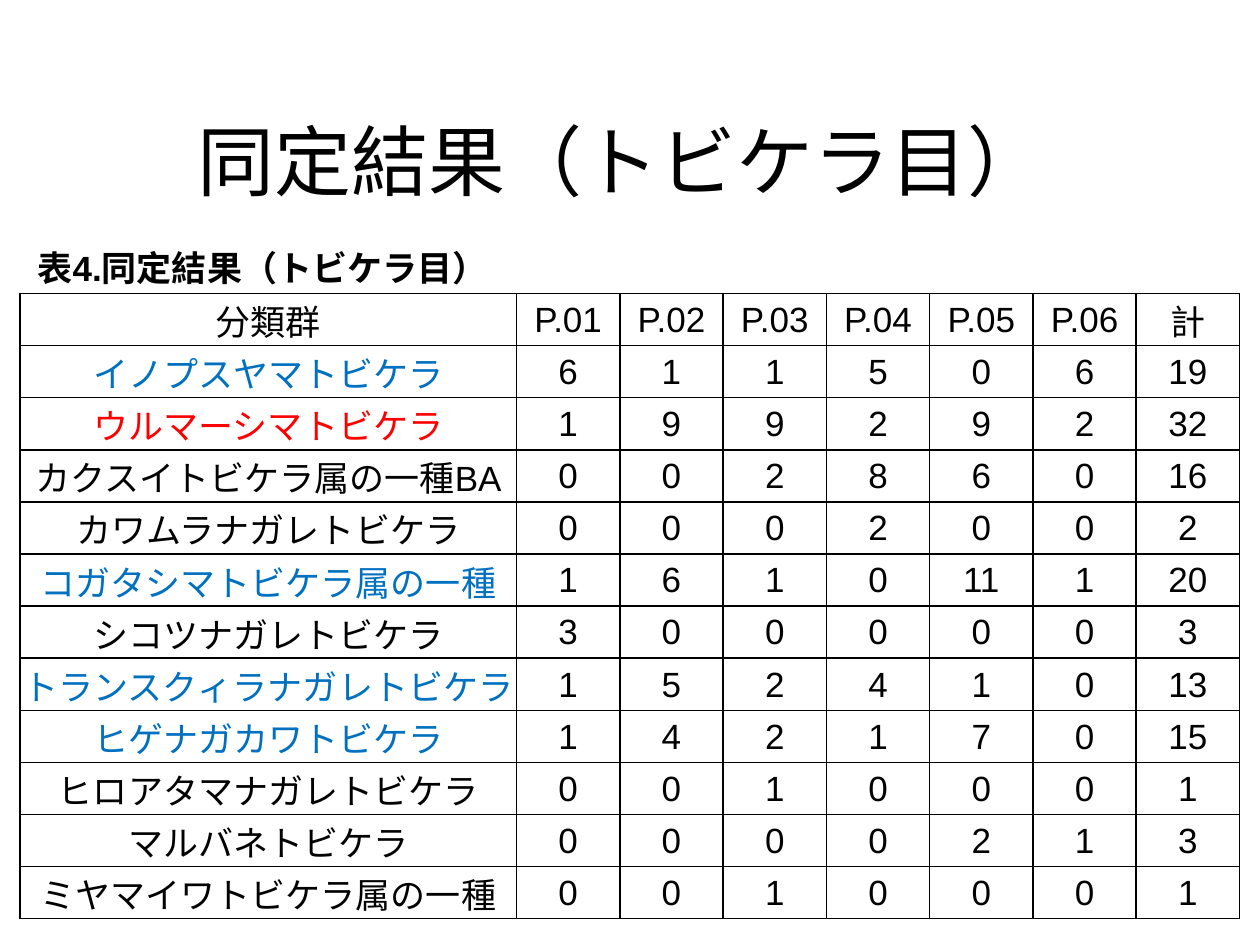
import pptx
import pptx.util
import pptx.dml.color
import pptx.enum.text
import pptx.oxml
import pptx.oxml.ns
from pptx.util import Inches

RGBColor = pptx.dml.color.RGBColor
BLACK = RGBColor(0x00, 0x00, 0x00)
BLUE = RGBColor(0x00, 0x70, 0xC0)
RED = RGBColor(0xFF, 0x00, 0x00)
CENTER = pptx.enum.text.PP_ALIGN.CENTER
MIDDLE = pptx.enum.text.MSO_ANCHOR.MIDDLE

# Content
TITLE = "同定結果（トビケラ目）"
CAPTION = "表4.同定結果（トビケラ目）"
HEADER = ["分類群", "P.01", "P.02", "P.03", "P.04", "P.05", "P.06", "計"]
TAXA = [  # name, name colour, counts at P.01 to P.06
    ("イノプスヤマトビケラ", BLUE, [6, 1, 1, 5, 0, 6]),
    ("ウルマーシマトビケラ", RED, [1, 9, 9, 2, 9, 2]),
    ("カクスイトビケラ属の一種BA", BLACK, [0, 0, 2, 8, 6, 0]),
    ("カワムラナガレトビケラ", BLACK, [0, 0, 0, 2, 0, 0]),
    ("コガタシマトビケラ属の一種", BLUE, [1, 6, 1, 0, 11, 1]),
    ("シコツナガレトビケラ", BLACK, [3, 0, 0, 0, 0, 0]),
    ("トランスクィラナガレトビケラ", BLUE, [1, 5, 2, 4, 1, 0]),
    ("ヒゲナガカワトビケラ", BLUE, [1, 4, 2, 1, 7, 0]),
    ("ヒロアタマナガレトビケラ", BLACK, [0, 0, 1, 0, 0, 0]),
    ("マルバネトビケラ", BLACK, [0, 0, 0, 0, 2, 1]),
    ("ミヤマイワトビケラ属の一種", BLACK, [0, 0, 1, 0, 0, 0]),
]
NAME_W, COUNT_W, ROW_H = 3.94, 0.82, 0.41


def format_text(p, size, font, color=BLACK, bold=False):
    for r in p.runs:
        r.font.size = pptx.util.Pt(size)
        r.font.name = font
        r.font.color.rgb = color
        r.font.bold = bold


def add_borders(cell):
    tcPr = cell._tc.get_or_add_tcPr()
    for i, side in enumerate(("lnL", "lnR", "lnT", "lnB")):
        tcPr.insert(i, pptx.oxml.parse_xml(
            f'<a:{side} {pptx.oxml.ns.nsdecls("a")} w="12700"><a:solidFill>'
            f'<a:srgbClr val="{BLACK}"/></a:solidFill></a:{side}>'))


def fill_cell(cell, text, color):
    cell.fill.background()
    cell.vertical_anchor = MIDDLE
    cell.margin_left = cell.margin_right = cell.margin_top = Inches(0.01)
    cell.margin_bottom = 0
    p = cell.text_frame.paragraphs[0]
    p.text = str(text)
    p.alignment = CENTER
    format_text(p, 20, "Arial", color)
    add_borders(cell)


prs = pptx.Presentation()
prs.slide_width, prs.slide_height = Inches(10), Inches(7.5)
s = prs.slides.add_slide(prs.slide_layouts[5])

# Title
sp = s.shapes.title
sp.left, sp.top, sp.width, sp.height = map(Inches, (0.43, 0.68, 9, 1.17))
tf = sp.text_frame
tf.text = TITLE
tf.vertical_anchor = MIDDLE
tf.paragraphs[0].alignment = CENTER
format_text(tf.paragraphs[0], 44, "Calibri")

# Table of counts, with the total of each taxon in the last column
rows = [(HEADER, BLACK)]
rows += [([name, *counts, sum(counts)], color) for name, color, counts in TAXA]
widths = [NAME_W] + [COUNT_W] * (len(HEADER) - 1)
table = s.shapes.add_table(
    len(rows), len(widths), Inches(0.16), Inches(2.33),
    Inches(sum(widths)), Inches(ROW_H * len(rows))).table
table.first_row = table.horz_banding = False
for column, width in zip(table.columns, widths):
    column.width = Inches(width)
for i, (values, name_color) in enumerate(rows):
    table.rows[i].height = Inches(ROW_H)
    for j, value in enumerate(values):
        fill_cell(table.cell(i, j), value, name_color if j == 0 else BLACK)

# Table caption
tf = s.shapes.add_textbox(*map(Inches, (0.2, 1.91, 5.2, 0.44))).text_frame
tf.word_wrap = True
tf.auto_size = pptx.enum.text.MSO_AUTO_SIZE.SHAPE_TO_FIT_TEXT
tf.text = CAPTION
format_text(tf.paragraphs[0], 20, "Arial", bold=True)

prs.save("out.pptx")
